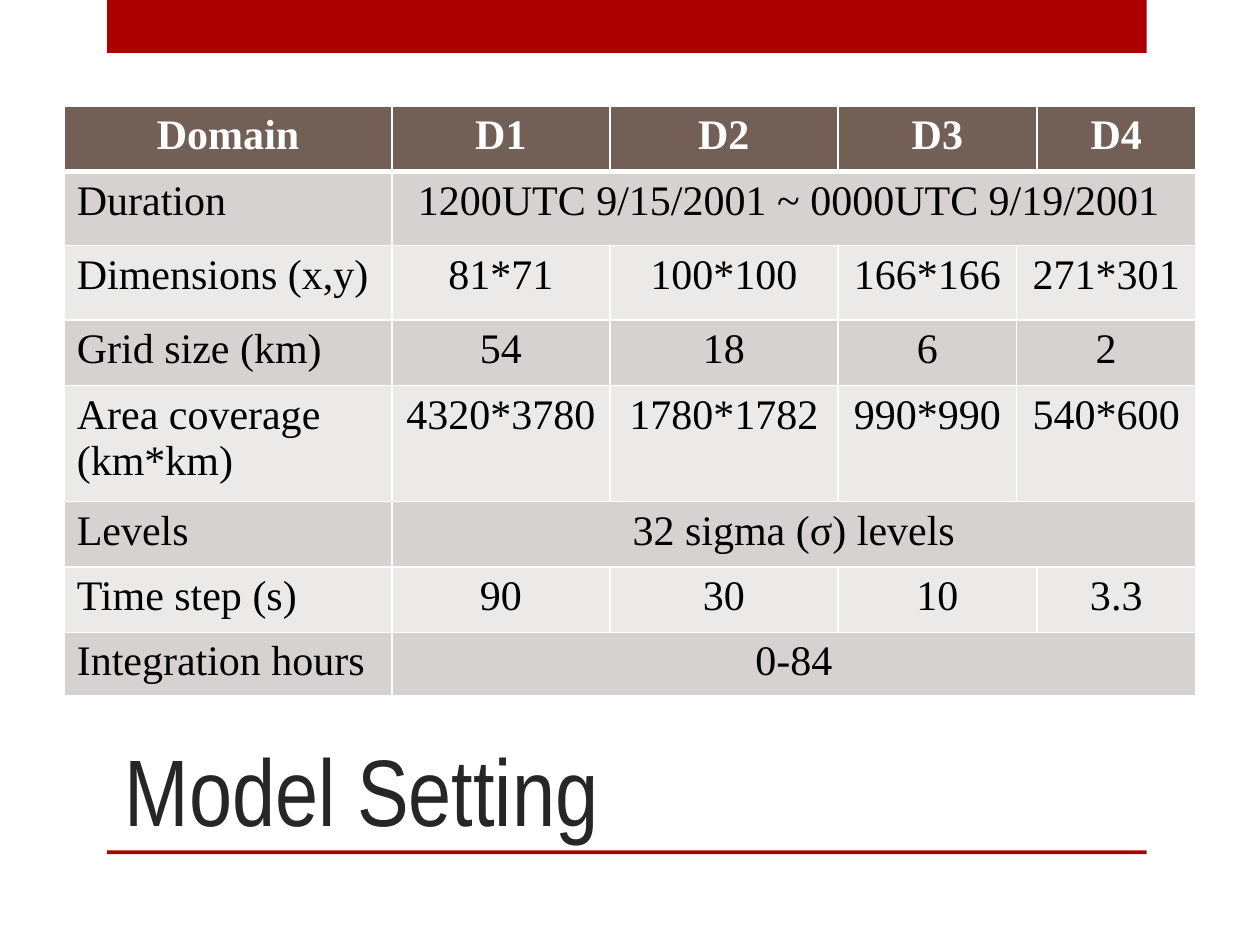
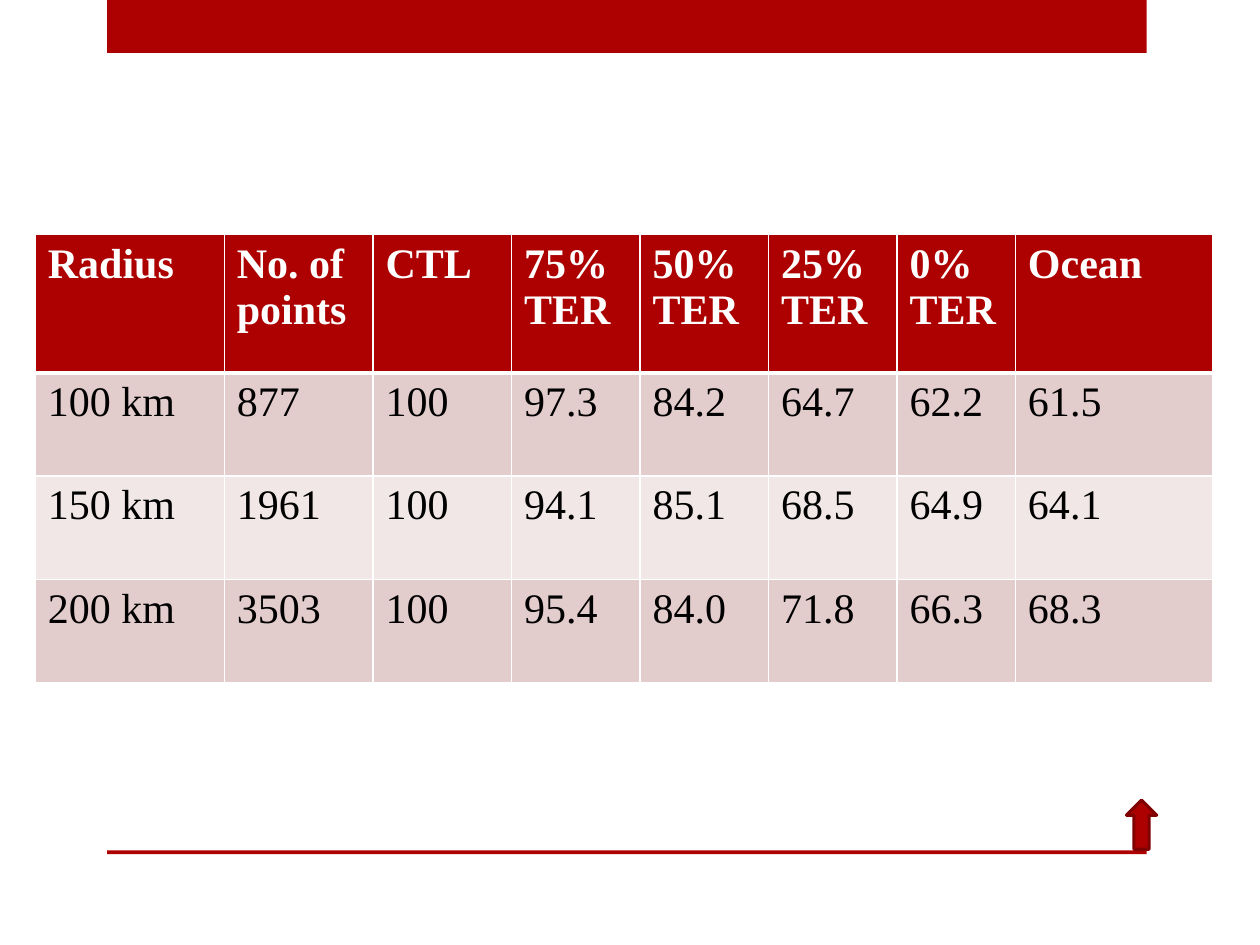
from dataclasses import dataclass

from lxml import etree
from pptx import Presentation
from pptx.dml.color import RGBColor
from pptx.enum.shapes import MSO_SHAPE as Shape
from pptx.enum.text import MSO_ANCHOR as Anchor, PP_ALIGN as Align
from pptx.oxml.ns import qn
from pptx.util import Inches, Pt

RED, DARK_RED, BROWN = "AD0101", "800101", "726056"
WHITE, BLACK, CHARCOAL = "FFFFFF", "000000", "262626"
TITLE_FONT, TABLE_FONT = "Arial Narrow", "Times New Roman"
BAND_LEFT, BAND_WIDTH = 0.85, 8.25


@dataclass
class TableSpec:
    left: float
    top: float
    widths: list[float]
    heights: list[float]
    rows: list[list[str | None]]  # None extends the cell to its left
    header: str
    bands: tuple[str, str]
    head_align: Align = Align.LEFT
    value_align: Align = Align.LEFT


MODEL_SETTING = TableSpec(
    left=0.51, top=0.84,
    widths=[2.6, 1.73, 1.81, 1.42, 0.16, 1.26],
    heights=[0.52, 0.59, 0.59, 0.52, 0.92, 0.52, 0.52, 0.49],
    rows=[
        ["Domain", "D1", "D2", "D3", None, "D4"],
        ["Duration", "1200UTC 9/15/2001 ~ 0000UTC 9/19/2001 ", None, None, None, None],
        ["Dimensions (x,y)", "81*71", "100*100", "166*166", "271*301", None],
        ["Grid size (km)", "54", "18", "6", "2", None],
        ["Area coverage (km*km)", "4320*3780", "1780*1782", "990*990", "540*600", None],
        ["Levels", "32 sigma (σ) levels", None, None, None, None],
        ["Time step (s)", "90", "30", "10", None, "3.3"],
        ["Integration hours", "0-84", None, None, None, None],
    ],
    header=BROWN, bands=("D5D2D1", "EBEAE9"),
    head_align=Align.CENTER, value_align=Align.CENTER,
)

RADIUS_RESULTS = TableSpec(
    left=0.28, top=1.86,
    widths=[1.5, 1.18, 1.1, 1.02, 1.02, 1.02, 0.94, 1.57],
    heights=[1.1, 0.82, 0.82, 0.82],
    rows=[
        ["Radius", "No. of points", "CTL", "75% TER", "50% TER", "25% TER", "0% TER", "Ocean"],
        ["100 km", "877", "100", "97.3", "84.2", "64.7", "62.2", "61.5"],
        ["150 km", "1961", "100", "94.1", "85.1", "68.5", "64.9", "64.1"],
        ["200 km", "3503", "100", "95.4", "84.0", "71.8", "66.3", "68.3"],
    ],
    header=RED, bands=("E3CCCC", "F1E7E7"),
)


def rgb(value: str) -> RGBColor:
    return RGBColor.from_string(value)


def style_text(p, font: str, size: float, color: str, bold: bool = False) -> None:
    for r in p.runs:
        r.font.name, r.font.size, r.font.bold = font, Pt(size), bold
        r.font.color.rgb = rgb(color)


def add_shape(slide, kind: Shape, left: float, top: float, width: float,
              height: float, fill: str):
    sp = slide.shapes.add_shape(kind, Inches(left), Inches(top), Inches(width), Inches(height))
    sp.shadow.inherit = False
    sp.fill.solid()
    sp.fill.fore_color.rgb = rgb(fill)
    sp.line.fill.background()
    return sp


def add_base_slide(prs):
    """Blank slide with the red band on top and the thin rule below."""
    slide = prs.slides.add_slide(prs.slide_layouts[6])
    for top, height in ((0, 0.42), (6.75, 0.03)):
        add_shape(slide, Shape.RECTANGLE, BAND_LEFT, top, BAND_WIDTH, height, RED)
    return slide


def add_title(slide, text: str) -> None:
    tf = slide.shapes.add_textbox(Inches(0.89), Inches(5.01), Inches(7.42), Inches(1.75)).text_frame
    tf.word_wrap = True
    tf.vertical_anchor = Anchor.BOTTOM
    tf.text = text
    style_text(tf.paragraphs[0], TITLE_FONT, 54, CHARCOAL)


def set_borders(cell, top: float, bottom: float) -> None:
    tc_pr = cell._tc.get_or_add_tcPr()
    for side, width in (("L", 1), ("R", 1), ("T", top), ("B", bottom)):
        ln = etree.SubElement(tc_pr, qn(f"a:ln{side}"), w=str(Pt(width)))
        fill = etree.SubElement(ln, qn("a:solidFill"))
        etree.SubElement(fill, qn("a:srgbClr"), val=WHITE)


def fill_cell(cell, spec: TableSpec, row: int, col: int, text: str) -> None:
    is_head = row == 0
    set_borders(cell, top=3 if row == 1 else 1, bottom=3 if is_head else 1)
    cell.fill.solid()
    cell.fill.fore_color.rgb = rgb(spec.header if is_head else spec.bands[(row - 1) % 2])
    cell.text_frame.text = text
    p = cell.text_frame.paragraphs[0]
    p.alignment = spec.head_align if is_head else spec.value_align if col else Align.LEFT
    style_text(p, TABLE_FONT, 24, WHITE if is_head else BLACK, bold=is_head)


def add_table(slide, spec: TableSpec) -> None:
    table = slide.shapes.add_table(
        len(spec.heights), len(spec.widths), Inches(spec.left), Inches(spec.top),
        Inches(sum(spec.widths)), Inches(sum(spec.heights))).table
    for column, width in zip(table.columns, spec.widths):
        column.width = Inches(width)
    for i, (height, texts) in enumerate(zip(spec.heights, spec.rows)):
        table.rows[i].height = Inches(height)
        for j, text in enumerate(texts):
            if text is None:
                continue
            end = j
            while end + 1 < len(texts) and texts[end + 1] is None:
                end += 1
            cell = table.cell(i, j)
            if end > j:
                cell.merge(table.cell(i, end))
            fill_cell(cell, spec, i, j, text)


def main() -> None:
    prs = Presentation()
    prs.slide_width, prs.slide_height = Inches(10), Inches(7.5)

    # Model setting
    slide = add_base_slide(prs)
    add_title(slide, "Model Setting")
    add_table(slide, MODEL_SETTING)

    # Results by radius, with the up arrow
    slide = add_base_slide(prs)
    add_table(slide, RADIUS_RESULTS)
    arrow = add_shape(slide, Shape.UP_ARROW, 8.94, 6.35, 0.24, 0.39, RED)
    arrow.line.color.rgb = rgb(DARK_RED)
    arrow.line.width = Pt(1.75)

    prs.save("out.pptx")


if __name__ == "__main__":
    main()
